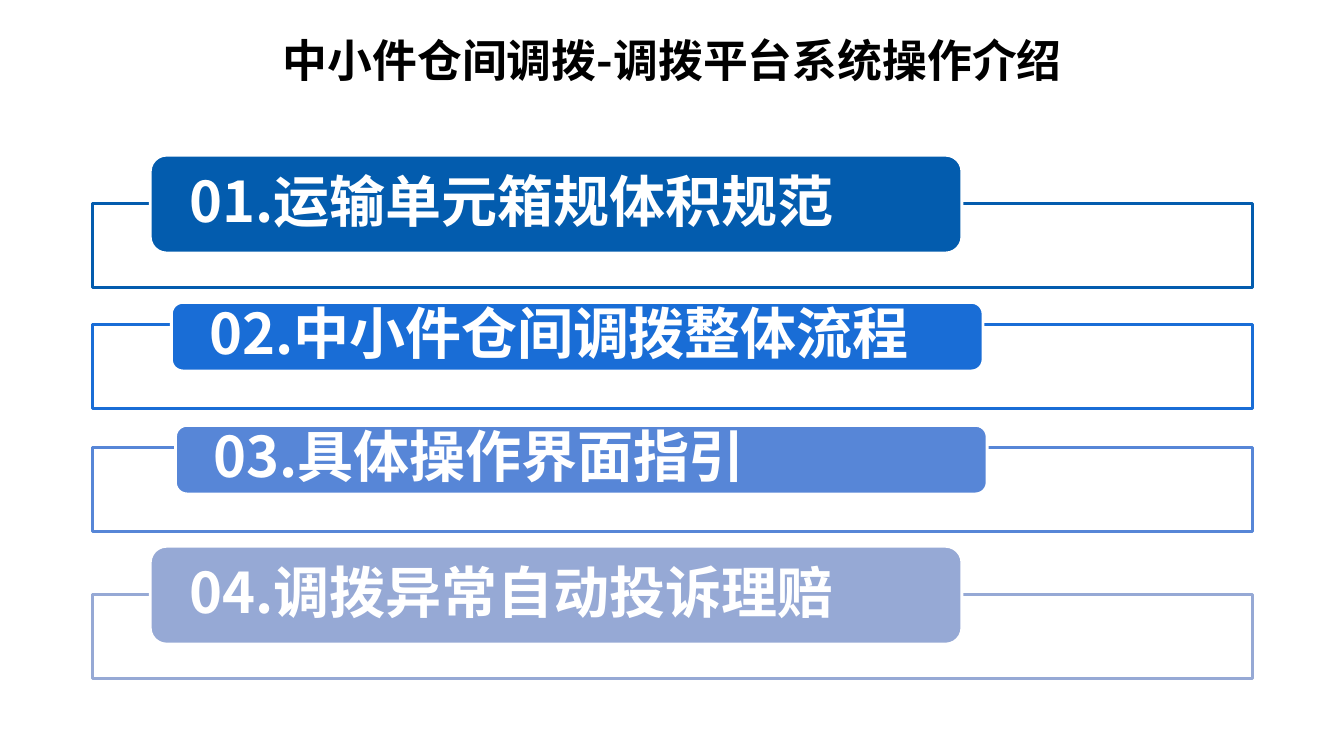
"""Build the agenda slide for the warehouse transfer platform introduction."""
from lxml import etree
from pptx import Presentation
from pptx.dml.color import RGBColor
from pptx.enum.shapes import MSO_SHAPE
from pptx.enum.text import MSO_ANCHOR, MSO_AUTO_SIZE, PP_ALIGN
from pptx.oxml.ns import qn
from pptx.util import Inches, Pt

RECTANGLE = MSO_SHAPE.RECTANGLE
ROUNDED = MSO_SHAPE.ROUNDED_RECTANGLE
TOP, MIDDLE = MSO_ANCHOR.TOP, MSO_ANCHOR.MIDDLE
LEFT, CENTER = PP_ALIGN.LEFT, PP_ALIGN.CENTER
NO_AUTOFIT = MSO_AUTO_SIZE.NONE
FONT = "Noto Sans CJK SC"
COLORS = {
    "black": "000000",
    "white": "FFFFFF",
    "navy": "035CAE",
    "blue": "196DD6",
    "sky": "5786D7",
    "lavender": "96A9D5",
}


def write_text(shape, text, size, color, align, anchor, side_inset, edge_inset):
    frame = shape.text_frame
    frame.word_wrap = True
    frame.auto_size = NO_AUTOFIT
    frame.vertical_anchor = anchor
    frame.margin_left = frame.margin_right = Inches(side_inset)
    frame.margin_top = frame.margin_bottom = Inches(edge_inset)
    paragraph = frame.paragraphs[0]
    paragraph.alignment = align
    paragraph.line_spacing = 0.9
    paragraph.space_before = Pt(0)
    run = paragraph.add_run()
    run.text = text
    run.font.size = Pt(size)
    run.font.bold = True
    run.font.color.rgb = RGBColor.from_string(COLORS[color])
    run.font.name = FONT
    etree.SubElement(run.font._element, qn("a:ea"), typeface=FONT)


def add_box(kind, left, top, width, height, fill, line):
    shape = slide.shapes.add_shape(
        kind, Inches(left), Inches(top), Inches(width), Inches(height))
    shape.shadow.inherit = False
    shape.fill.solid()
    shape.fill.fore_color.rgb = RGBColor.from_string(COLORS[fill])
    shape.line.color.rgb = RGBColor.from_string(COLORS[line])
    shape.line.width = Pt(2)
    return shape


presentation = Presentation()
presentation.slide_width = Inches(13.33)
presentation.slide_height = Inches(7.5)
slide = presentation.slides.add_slide(presentation.slide_layouts[5])

title = slide.shapes.title
title.left, title.top = Inches(0.92), Inches(0.33)
title.width, title.height = Inches(11.5), Inches(0.92)
write_text(title, "中小件仓间调拨-调拨平台系统操作介绍", 32, "black", CENTER, TOP, 0.1, 0.05)

agenda = [
    ("01.运输单元箱规体积规范", "navy", 2.02, 1.49, 1.54, 0.97),
    ("02.中小件仓间调拨整体流程", "blue", 3.22, 1.7, 3.0, 0.68),
    ("03.具体操作界面指引", "sky", 4.44, 1.74, 4.22, 0.68),
    ("04.调拨异常自动投诉理赔", "lavender", 5.9, 1.49, 5.42, 0.97),
]
for text, color, frame_top, bar_left, bar_top, bar_height in agenda:
    outline = add_box(RECTANGLE, 0.92, frame_top, 11.5, 0.83, "white", color)
    fill_color = outline._element.spPr.find(qn("a:solidFill"))[0]
    etree.SubElement(fill_color, qn("a:alpha"), val="90000")
    bar = add_box(ROUNDED, bar_left, bar_top, 8.05, bar_height, color, "white")
    write_text(bar, text, 40, "white", LEFT, MIDDLE, 0.34, 0)

presentation.save("out.pptx")
